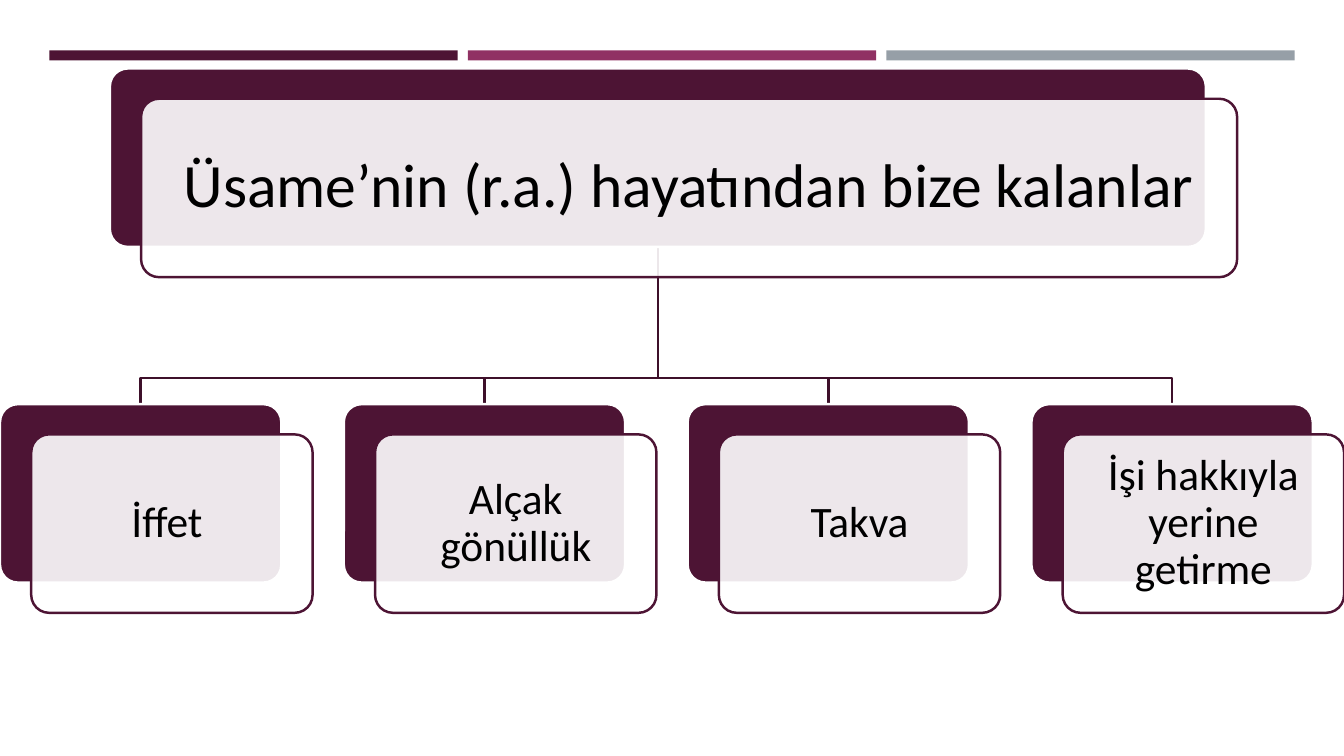
import pptx
import pptx.util
import pptx.dml.color
import pptx.enum.shapes
import pptx.enum.text
import lxml.etree
from pptx.util import Inches

TITLE = "Üsame’nin (r.a.) hayatından bize kalanlar"
LESSONS = ["İffet ", "Alçak gönüllük", "Takva", "İşi hakkıyla yerine getirme"]

THEME = {
    "plum": "4D1434",
    "magenta": "903163",
    "grey": "969FA7",
    "branch": "3E102A",
    "white": "FFFFFF",
    "black": "000000",
    "font": "Calibri",
    "title_size": 44,
    "lesson_size": 31,
    "line_width": 1.75,
}

# Lengths in inches
BAR_LEFT, BAR_TOP, BAR_WIDTH, BAR_HEIGHT, BAR_PITCH = 0.49, 0.5, 4.05, 0.1, 4.15
CARD_HEIGHT = 1.77
CARD_SHIFT = (0.31, 0.3)
TITLE_LEFT, TITLE_TOP, TITLE_WIDTH = 1.09, 0.68, 10.87
LESSON_TOP, LESSON_WIDTH, LESSON_PITCH = 4.01, 2.79, 3.41
BRANCH_TOP, BRANCH_BEND = TITLE_TOP + CARD_HEIGHT, 3.75


def color(name):
    return pptx.dml.color.RGBColor.from_string(THEME[name])


def set_line(shape, name):
    shape.line.color.rgb = color(name)
    shape.line.width = pptx.util.Pt(THEME["line_width"])


def add_block(slide, kind, box, fill, line=None):
    shape = slide.shapes.add_shape(kind, *map(Inches, box))
    shape.shadow.inherit = False
    shape.fill.solid()
    shape.fill.fore_color.rgb = color(fill)
    if line:
        set_line(shape, line)
    else:
        shape.line.fill.background()
    return shape


def set_opacity(shape, percent):
    namespace = pptx.oxml.ns.qn("a:alpha")
    fill_color = shape.fill._xPr.find(".//" + pptx.oxml.ns.qn("a:srgbClr"))
    lxml.etree.SubElement(fill_color, namespace).set("val", str(percent * 1000))


def add_card(slide, text, left, top, width, size, inset):
    """Draw a dark card with a translucent, labelled card shifted over it."""
    rounded = pptx.enum.shapes.MSO_SHAPE.ROUNDED_RECTANGLE
    shift_x, shift_y = CARD_SHIFT
    back = add_block(slide, rounded, (left, top, width, CARD_HEIGHT), "plum", "white")
    front = add_block(slide, rounded, (left + shift_x, top + shift_y, width, CARD_HEIGHT),
                      "white", "plum")
    for card in (back, front):
        card.adjustments[0] = 0.1
    set_opacity(front, 90)

    frame = front.text_frame
    frame.word_wrap = True
    frame.vertical_anchor = pptx.enum.text.MSO_ANCHOR.MIDDLE
    frame.margin_left = frame.margin_right = Inches(inset)
    frame.margin_top = frame.margin_bottom = Inches(inset)
    paragraph = frame.paragraphs[0]
    paragraph.text = text
    paragraph.alignment = pptx.enum.text.PP_ALIGN.CENTER
    paragraph.line_spacing = 0.9
    paragraph.font.name = THEME["font"]
    paragraph.font.size = pptx.util.Pt(THEME[size])
    paragraph.font.color.rgb = color("black")


def add_branch(slide, start_x, end_x):
    points = [(start_x, BRANCH_TOP), (start_x, BRANCH_BEND),
              (end_x, BRANCH_BEND), (end_x, LESSON_TOP)]
    corners = [(Inches(x), Inches(y)) for x, y in points]
    builder = slide.shapes.build_freeform(*corners[0])
    builder.add_line_segments(corners[1:], close=False)
    branch = builder.convert_to_shape()
    branch.shadow.inherit = False
    branch.fill.background()
    set_line(branch, "branch")


def main():
    presentation = pptx.Presentation()
    presentation.slide_width = Inches(13.33)
    presentation.slide_height = Inches(7.5)
    slide = presentation.slides.add_slide(presentation.slide_layouts[6])

    for index, name in enumerate(("plum", "magenta", "grey")):
        box = (BAR_LEFT + index * BAR_PITCH, BAR_TOP, BAR_WIDTH, BAR_HEIGHT)
        add_block(slide, pptx.enum.shapes.MSO_SHAPE.RECTANGLE, box, name)

    lesson_lefts = [index * LESSON_PITCH for index in range(len(LESSONS))]
    for left in reversed(lesson_lefts):
        add_branch(slide, TITLE_LEFT + TITLE_WIDTH / 2, left + LESSON_WIDTH / 2)

    add_card(slide, TITLE, TITLE_LEFT, TITLE_TOP, TITLE_WIDTH, "title_size", 0.18)
    for text, left in zip(LESSONS, lesson_lefts):
        add_card(slide, text, left, LESSON_TOP, LESSON_WIDTH, "lesson_size", 0.13)

    presentation.save("out.pptx")


if __name__ == "__main__":
    main()
